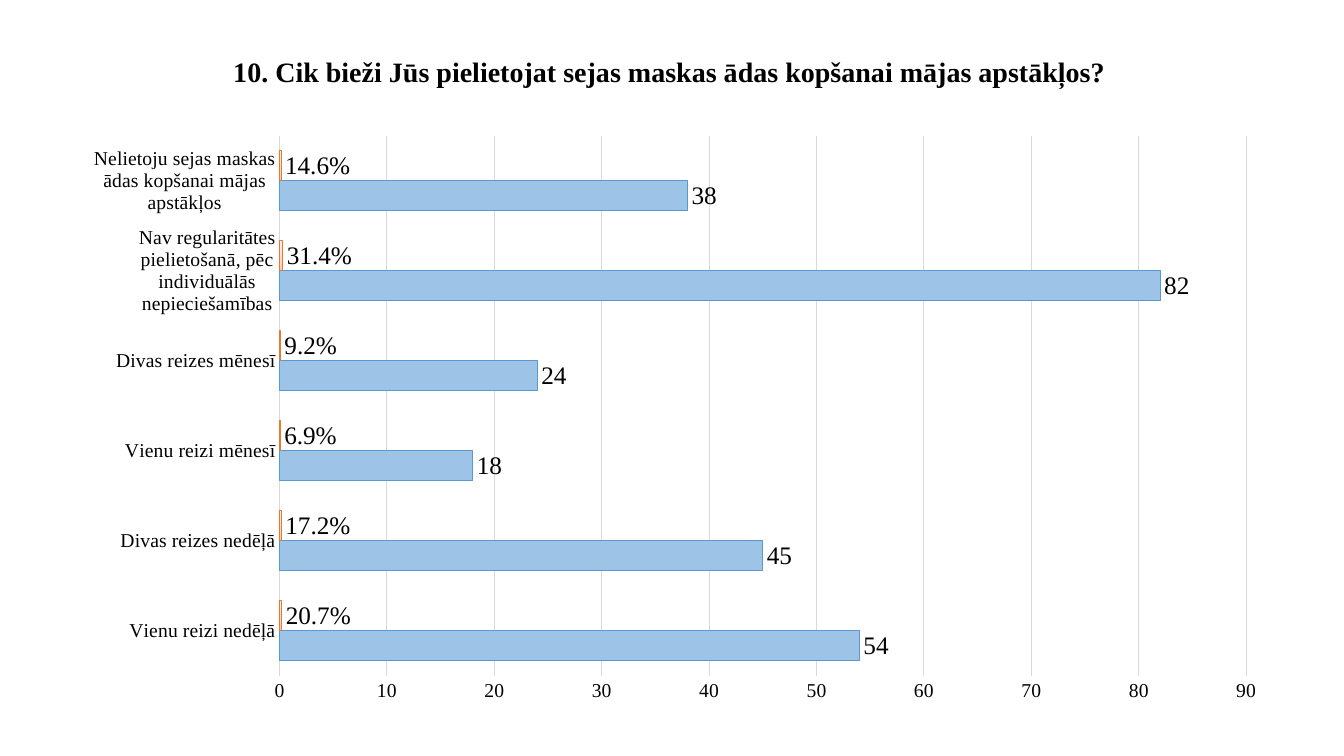
from copy import deepcopy

from pptx import Presentation
from pptx.chart.data import CategoryChartData
from pptx.dml.color import RGBColor
from pptx.enum import chart as kinds, text
from pptx.oxml.ns import qn
from pptx.util import Inches, Pt

TITLE = "10. Cik bieži Jūs pielietojat sejas maskas ādas kopšanai mājas apstākļos?"
ANSWERS = [
    ("Vienu reizi nedēļā", 54, 0.207),
    ("Divas reizes nedēļā", 45, 0.172),
    ("Vienu reizi mēnesī", 18, 0.069),
    ("Divas reizes mēnesī", 24, 0.092),
    ("Nav regularitātes pielietošanā, pēc individuālās nepieciešamības", 82, 0.314),
    ("Nelietoju sejas maskas ādas kopšanai mājas apstākļos", 38, 0.146),
]
THEME = {
    "font": "Times New Roman", "ink": "000000", "grid": "D9D9D9",
    "title": 20, "axis": 14, "label": 18, "line": 0.75,
    "count": "9DC3E6", "edges": ("5998D0", "E87A30"),
    "share": [(0, "FFC7B6"), (0.35, "FFD7CB"), (1, "FFF0EB")],
}
TITLE_BOX = (0.89, 0.16, 11.5, 1.14)
CHART_BOX = (0.69, 1.23, 12.01, 5.85)


def rgb(name):
    return RGBColor.from_string(THEME.get(name, name))


def assign(item, values):
    for key, value in values.items():
        setattr(item, key, value)


def style(font, size, bold=False):
    assign(font, {"name": THEME["font"], "size": Pt(THEME[size]), "bold": bold})
    font.color.rgb = rgb("ink")


def draw(line, color):
    line.color.rgb = rgb(color)
    line.width = Pt(THEME["line"])


def blend(series, stops):
    """Fill a series with an upward gradient of any number of stops."""
    fill = series.format.fill
    fill.gradient()
    fill.gradient_angle = 90
    stop_list = series._element.find(".//" + qn("a:gsLst"))
    while len(stop_list) < len(stops):
        stop_list.append(deepcopy(stop_list[-1]))
    for stop, (place, color) in zip(fill.gradient_stops, stops):
        stop.position = place
        stop.color.rgb = rgb(color)


def add_title(slide):
    frame = slide.shapes.add_textbox(*map(Inches, TITLE_BOX)).text_frame
    assign(frame, {"word_wrap": True, "vertical_anchor": text.MSO_ANCHOR.MIDDLE})
    para = frame.paragraphs[0]
    assign(para, {"text": TITLE, "alignment": text.PP_ALIGN.CENTER, "line_spacing": 0.9})
    style(para.runs[0].font, "title", True)


def add_bars(slide):
    names, counts, shares = zip(*ANSWERS)
    data = CategoryChartData()
    data.categories = names
    data.add_series("Series 1", counts)
    data.add_series("Series 2", shares, "0.0%")
    chart = slide.shapes.add_chart(
        kinds.XL_CHART_TYPE.BAR_CLUSTERED, *map(Inches, CHART_BOX), data).chart
    assign(chart, {"has_legend": False, "has_title": False})

    for axis in (chart.category_axis, chart.value_axis):
        axis.major_tick_mark = axis.minor_tick_mark = kinds.XL_TICK_MARK.NONE
        style(axis.tick_labels.font, "axis")
    chart.category_axis.has_major_gridlines = False
    draw(chart.category_axis.format.line, "grid")
    scale = chart.value_axis
    assign(scale, {"minimum_scale": 0, "maximum_scale": 90, "major_unit": 10})
    scale.format.line.fill.background()
    draw(scale.major_gridlines.format.line, "grid")

    plot = chart.plots[0]
    assign(plot, {"gap_width": 100, "overlap": 0, "vary_by_categories": False})
    count, share = plot.series
    count.format.fill.solid()
    count.format.fill.fore_color.rgb = rgb("count")
    blend(share, THEME["share"])
    for series, edge, form in zip(plot.series, THEME["edges"], ("General", "0.0%")):
        draw(series.format.line, edge)
        labels = series.data_labels
        assign(labels, {"show_value": True, "number_format": form,
                        "number_format_is_linked": False,
                        "position": kinds.XL_LABEL_POSITION.OUTSIDE_END})
        style(labels.font, "label")


def main():
    deck = Presentation()
    assign(deck, {"slide_width": Inches(13.33), "slide_height": Inches(7.5)})
    slide = deck.slides.add_slide(deck.slide_layouts[6])
    add_title(slide)
    add_bars(slide)
    deck.save("out.pptx")


if __name__ == "__main__":
    main()
